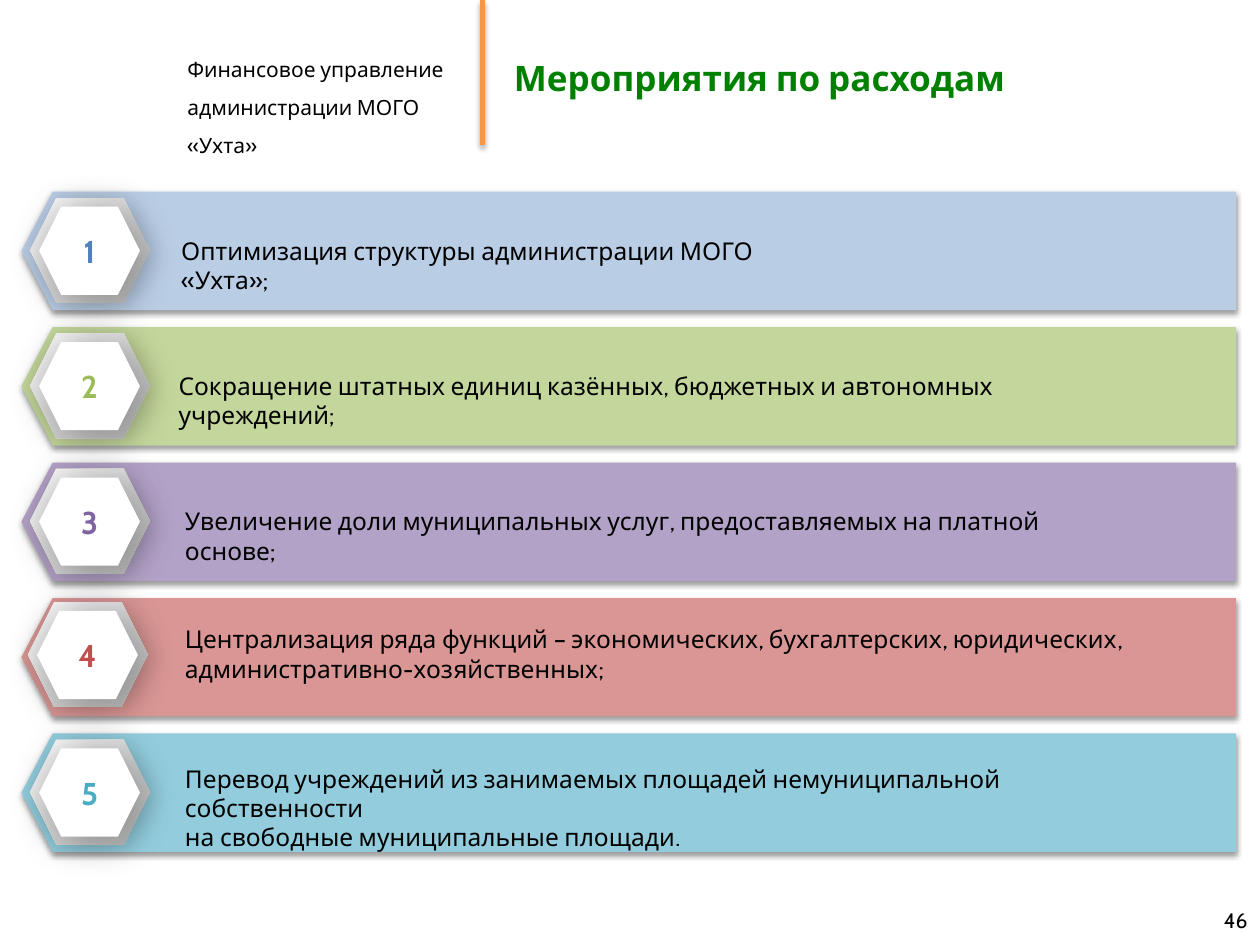
from lxml import etree
from pptx import Presentation
from pptx.dml.color import RGBColor
from pptx.enum import shapes, text
from pptx.oxml import ns
from pptx.util import Pt

FONT = "Cabin"
BLACK = RGBColor(0x00, 0x00, 0x00)
WHITE = RGBColor(0xFF, 0xFF, 0xFF)
GRAY = RGBColor(0xB0, 0xB0, 0xB0)
GREEN = RGBColor(0x00, 0x80, 0x00)
ORANGE = RGBColor(0xF7, 0x96, 0x46)

# Bar colour, number colour, text left, text drop, text width, badge shift, lines
ROWS = [
    (RGBColor(0xB9, 0xCD, 0xE5), RGBColor(0x4F, 0x81, 0xBD), 96.5, 21.6, 374.4, 0,
     ["Оптимизация структуры администрации МОГО «Ухта»;"]),
    (RGBColor(0xC3, 0xD6, 0x9B), RGBColor(0x9B, 0xBB, 0x59), 95, 21.6, 546.5, 0,
     ["Сокращение штатных единиц казённых, бюджетных и автономных учреждений;"]),
    (RGBColor(0xB3, 0xA2, 0xC7), RGBColor(0x80, 0x64, 0xA2), 98.6, 21.6, 529.2, 0,
     ["Увеличение доли муниципальных услуг, предоставляемых на платной основе;"]),
    (RGBColor(0xD9, 0x96, 0x94), RGBColor(0xC0, 0x50, 0x4D), 98.6, 11.5, 607, -1.2,
     ["Централизация ряда функций – экономических, бухгалтерских, юридических, "
      "административно-хозяйственных;"]),
    (RGBColor(0x93, 0xCD, 0xDD), RGBColor(0x4B, 0xAC, 0xC6), 98.6, 13.7, 545.8, 0,
     ["Перевод учреждений из занимаемых площадей немуниципальной собственности",
      "на свободные муниципальные площади."]),
]


def shade(item, alpha, blur, dist, angle):
    """Give a shape or connector a black outer shadow."""
    props = item._element.spPr
    for old in props.findall(ns.qn("a:effectLst")):
        props.remove(old)
    effects = etree.SubElement(props, ns.qn("a:effectLst"))
    outer = etree.SubElement(
        effects, ns.qn("a:outerShdw"), blurRad=str(int(Pt(blur))),
        dist=str(int(Pt(dist))), dir=str(angle * 60000), algn="ctr", rotWithShape="0")
    tone = etree.SubElement(outer, ns.qn("a:srgbClr"), val="000000")
    etree.SubElement(tone, ns.qn("a:alpha"), val=str(alpha * 1000))


def write(frame, lines, size, color=BLACK, bold=False,
          align=text.PP_ALIGN.LEFT, anchor=text.MSO_ANCHOR.TOP, space=None):
    frame.text = "\n".join(lines)
    frame.word_wrap = True
    frame.auto_size = text.MSO_AUTO_SIZE.NONE
    frame.vertical_anchor = anchor
    for par in frame.paragraphs:
        par.alignment = align
        par.line_spacing = space
        for run in par.runs:
            font = run.font
            font.name, font.size, font.bold = FONT, Pt(size), bold
            font.color.rgb = color


def add_box(slide, left, top, width, height):
    return slide.shapes.add_textbox(Pt(left), Pt(top), Pt(width), Pt(height)).text_frame


def add_form(group, kind, left, top, width, height, color):
    form = group.shapes.add_shape(kind, Pt(left), Pt(top), Pt(width), Pt(height))
    form.shadow.inherit = False
    form.fill.solid()
    form.fill.fore_color.rgb = color
    form.line.fill.background()
    return form


def add_head(slide, left, top, width, height):
    # Office name
    write(add_box(slide, left, top + 21.6, 180, 47.5),
          ["Финансовое управление", "администрации МОГО «Ухта»"], 12, space=1.5)

    # Vertical rule
    mid = left + 175.7
    rule = slide.shapes.add_connector(
        shapes.MSO_CONNECTOR.STRAIGHT, Pt(mid), Pt(top), Pt(mid), Pt(top + height))
    rule.line.color.rgb = ORANGE
    rule.line.width = Pt(3)
    shade(rule, 35, 3.1, 1.8, 90)

    # Title
    title = slide.shapes.title
    title.left, title.top = Pt(mid + 10.8), Pt(top + 2.9)
    title.width, title.height = Pt(left + width - mid - 10.8), Pt(height)
    write(title.text_frame, ["Мероприятия по расходам"], 20, GREEN, True,
          anchor=text.MSO_ANCHOR.MIDDLE)


def add_row(slide, num, row, left, top, width, height):
    fill, tint, start, drop, span, shift, lines = row
    group = slide.shapes.add_group_shape()

    # Bar pointing left
    bar = add_form(group, shapes.MSO_SHAPE.PENTAGON, left, top, width, height, fill)
    bar.rotation = 180
    bar.adjustments[0] = 0.264
    shade(bar, 38, 3.1, 1.6, 90)

    # Badge rim and face
    x, y = left + 5 + shift, top + 3.7 + shift
    rim = add_form(group, shapes.MSO_SHAPE.HEXAGON, x, y, 68.4, 59.8, WHITE)
    rim.fill.gradient()
    rim.fill.gradient_angle = 315
    for stop, color in zip(rim.fill.gradient_stops, (WHITE, GRAY)):
        stop.color.rgb = color
    shade(rim, 13, 12, 3, 45)
    face = add_form(group, shapes.MSO_SHAPE.HEXAGON, x + 5.2, y + 4.9, 57.6, 50.4, WHITE)
    shade(face, 31, 24, 3, 45)
    write(face.text_frame, [str(num)], 18, tint, True,
          text.PP_ALIGN.CENTER, text.MSO_ANCHOR.MIDDLE)

    # Measure
    write(add_box(slide, start, top + drop, span, 24.5 if drop > 20 else 41), lines, 14)


def add_foot(slide, left, top, width, height):
    write(add_box(slide, left, top, width, height), ["46"], 12,
          align=text.PP_ALIGN.RIGHT, anchor=text.MSO_ANCHOR.MIDDLE)


def main():
    deck = Presentation()
    deck.slide_width, deck.slide_height = Pt(720), Pt(540)
    slide = deck.slides.add_slide(deck.slide_layouts[5])
    add_head(slide, 100, 0, 620, 82.8)
    for i, row in enumerate(ROWS):
        add_row(slide, i + 1, row, 12.2, 109.5 + 77.4 * i, 694, 67.7)
    add_foot(slide, 552, 511.2, 168, 28.8)
    deck.save("out.pptx")


if __name__ == "__main__":
    main()
